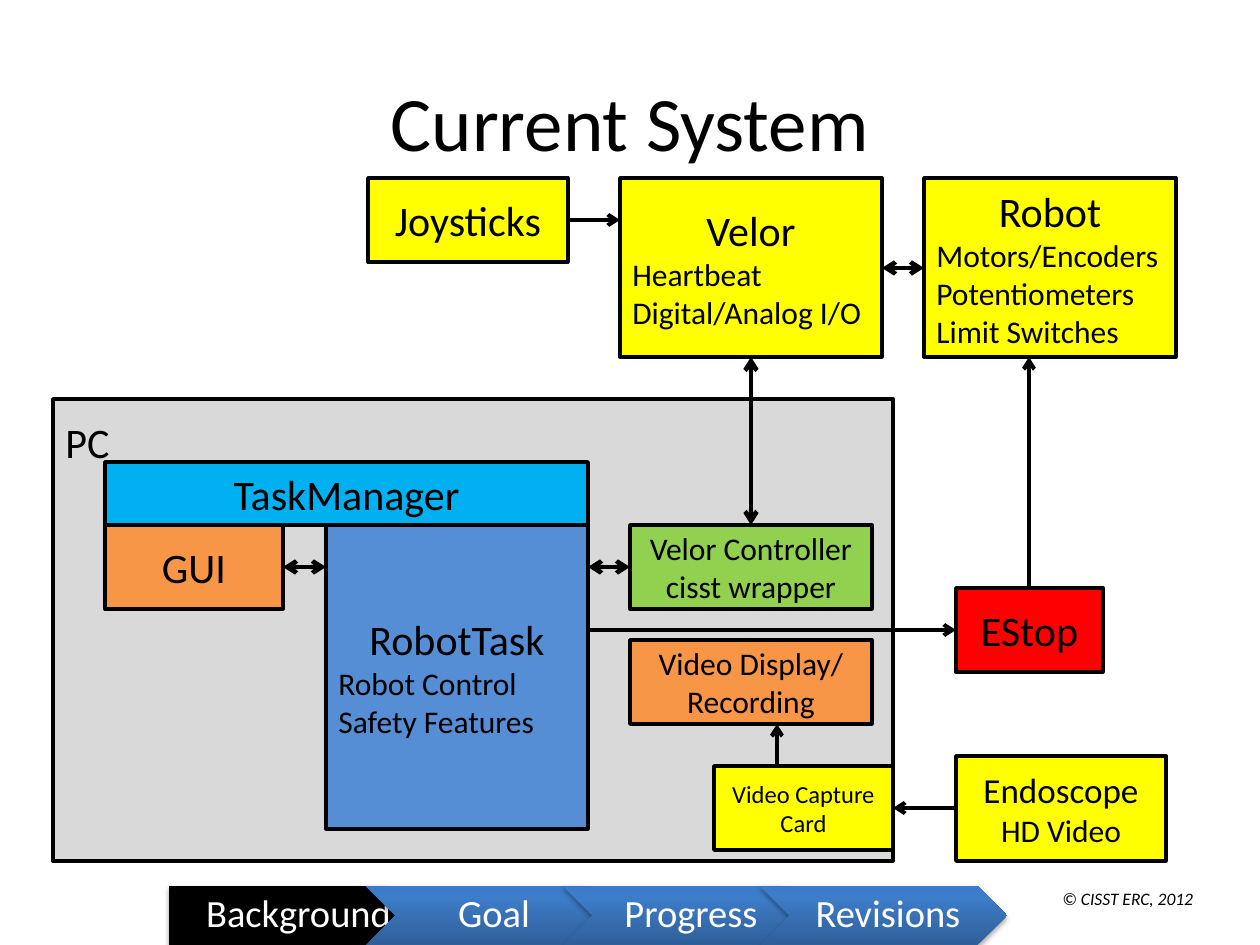
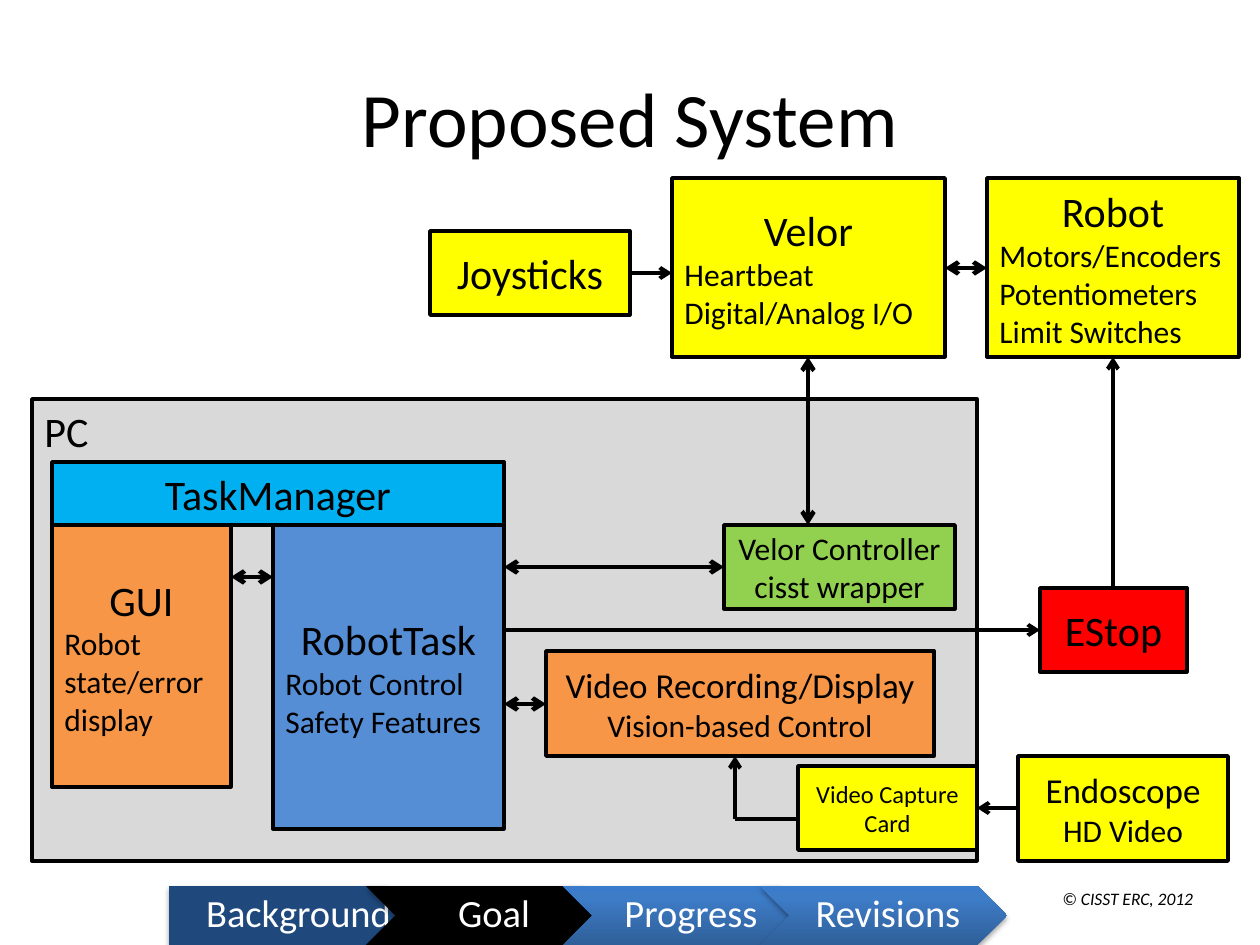
"""Builds two block diagrams: the current and the proposed robot system."""
from copy import deepcopy
from dataclasses import dataclass

from lxml.etree import SubElement
from pptx import Presentation
from pptx.dml.color import RGBColor
from pptx.enum.shapes import MSO_CONNECTOR, MSO_SHAPE
from pptx.enum.text import MSO_ANCHOR, PP_ALIGN
from pptx.oxml.ns import qn
from pptx.util import Pt

PX = 914400 / 126
CENTER, LEFT = PP_ALIGN.CENTER, PP_ALIGN.LEFT


@dataclass(frozen=True)
class Theme:
    font: str = "Calibri"
    ink: str = "000000"
    paper: str = "FFFFFF"
    frame: str = "D9D9D9"
    hardware: str = "FFFF00"
    manager: str = "00B0F0"
    task: str = "558ED5"
    wrapper: str = "92D050"
    app: str = "F79646"
    stop: str = "FF0000"
    step_done: str = "1F497D"
    step_stops: tuple = ((0, "2F5F99"), (0.8, "3D7CC7"), (1, "3A7CCB"))
    title: int = 44
    head: int = 24
    step: int = 22
    subhead: int = 20
    detail: int = 18
    small: int = 14
    credit: int = 10
    outline: float = 2
    one_way: float = 2.25
    two_way: float = 2.5


T = Theme()
STEPS = ["Background", "Goal", "Progress", "Revisions"]
STEP_LEFT, STEP_TOP, STEP_W, STEP_H, STEP_PITCH = 169, 886, 247, 59, 197
CREDIT = "© CISST ERC, 2012"
CREDIT_AREA = (1050, 882, 210, 34)
LABEL_SIZE = (73, 63)

PARTS = {
    "frame": (T.frame, [], LEFT),
    "manager": (T.manager, [("TaskManager", T.head)], CENTER),
    "task": (T.task, [("RobotTask", T.head), ("Robot Control", T.detail),
                      ("Safety Features", T.detail)], LEFT),
    "wrapper": (T.wrapper, [("Velor Controller", T.detail),
                            ("cisst wrapper", T.detail)], CENTER),
    "gui": (T.app, [("GUI", T.head)], CENTER),
    "velor": (T.hardware, [("Velor", T.head), ("Heartbeat", T.detail),
                           ("Digital/Analog I/O", T.detail)], LEFT),
    "robot": (T.hardware, [("Robot", T.head), ("Motors/Encoders", T.detail),
                           ("Potentiometers", T.detail),
                           ("Limit Switches", T.detail)], LEFT),
    "joysticks": (T.hardware, [("Joysticks", T.head)], CENTER),
    "estop": (T.stop, [("EStop", T.head)], CENTER),
    "endoscope": (T.hardware, [("Endoscope", T.subhead), ("HD Video", T.detail)], CENTER),
    "capture": (T.hardware, [("Video Capture Card", T.small)], CENTER),
    "video": (T.app, [("Video Display/ Recording", T.detail)], CENTER),
}

SYSTEMS = [
    {
        "title": "Current System", "title_top": 42, "step": 0, "label": (53, 410),
        "parts": PARTS,
        "areas": {
            "frame": (53, 399, 840, 462), "manager": (105, 462, 483, 63),
            "task": (326, 525, 262, 304), "wrapper": (630, 525, 242, 84),
            "gui": (105, 525, 178, 84), "velor": (620, 178, 262, 179),
            "robot": (924, 178, 252, 179), "joysticks": (368, 178, 200, 84),
            "estop": (956, 588, 147, 84), "endoscope": (956, 756, 210, 105),
            "capture": (714, 766, 179, 84), "video": (630, 640, 242, 84),
        },
        "two_way": [("velor", "wrapper", 751), ("task", "wrapper", 567),
                    ("velor", "robot", 268), ("task", "gui", 567)],
        "one_way": [("joysticks", "velor", 220), ("estop", "robot", 1029),
                    ("task", "estop", 630), ("capture", "video", 777),
                    ("endoscope", "capture", 808)],
        "corners": [],
    },
    {
        "title": "Proposed System", "title_top": 38, "step": 1, "label": (32, 399),
        "parts": PARTS | {
            "gui": (T.app, [("GUI", T.head),
                            ("Robot state/error display", T.detail)], LEFT),
            "video": (T.app, [("Video Recording/Display", T.subhead),
                              ("Vision-based Control", T.detail)], CENTER),
        },
        "areas": {
            "frame": (32, 399, 945, 462), "manager": (52, 462, 452, 63),
            "task": (273, 525, 231, 304), "wrapper": (724, 525, 231, 84),
            "gui": (52, 525, 179, 262), "velor": (672, 178, 273, 179),
            "robot": (987, 178, 252, 179), "joysticks": (430, 231, 200, 84),
            "estop": (1040, 588, 147, 84), "endoscope": (1018, 756, 210, 105),
            "capture": (798, 766, 179, 84), "video": (546, 651, 388, 105),
        },
        "two_way": [("velor", "wrapper", 808), ("task", "wrapper", 567),
                    ("velor", "robot", 268), ("task", "gui", 577),
                    ("video", "task", 704)],
        "one_way": [("joysticks", "velor", 273), ("estop", "robot", 1113),
                    ("task", "estop", 630), ("endoscope", "capture", 808)],
        "corners": [("capture", "video", (735, 819))],
    },
]


def emu(lengths):
    return [round(length * PX) for length in lengths]


def rgb(code):
    return RGBColor.from_string(code)


def write(shape, lines, detail_align=CENTER, color=T.ink, anchor=MSO_ANCHOR.MIDDLE):
    """Fills a shape with (text, size) lines; the first one is centred."""
    frame = shape.text_frame
    frame.word_wrap, frame.vertical_anchor = True, anchor
    for i, (text, size) in enumerate(lines):
        line = frame.add_paragraph() if i else frame.paragraphs[0]
        line.text = text
        line.alignment = detail_align if i else CENTER
        line.font.name, line.font.size = T.font, Pt(size)
        line.font.color.rgb = rgb(color)
    return frame


def add_note(slide, area, text, size):
    """Adds a left-aligned text box."""
    note = slide.shapes.add_textbox(*emu(area))
    line = write(note, [(text, size)], anchor=MSO_ANCHOR.TOP).paragraphs[0]
    line.alignment = LEFT
    return line


def add_part(slide, area, fill, lines, detail_align):
    """Adds one outlined block of the diagram."""
    block = slide.shapes.add_shape(MSO_SHAPE.RECTANGLE, *emu(area))
    block.shadow.inherit = False
    block.fill.solid()
    block.fill.fore_color.rgb = rgb(fill)
    block.line.color.rgb = rgb(T.ink)
    block.line.width = Pt(T.outline)
    write(block, lines, detail_align)


def add_line(slide, start, end, width, ends=()):
    """Draws a straight line with arrowheads at the named ends."""
    link = slide.shapes.add_connector(MSO_CONNECTOR.STRAIGHT, *emu(start + end))
    link.line.color.rgb = rgb(T.ink)
    link.line.width = Pt(width)
    outline = link.line._get_or_add_ln()
    for name in ends:
        SubElement(outline, qn(f"a:{name}"), type="arrow")
    SubElement(link._element.spPr, qn("a:effectLst"))


def facing_edges(a, b):
    """Returns the edges of two spans (start, length) that face each other."""
    if a[0] + a[1] <= b[0]:
        return a[0] + a[1], b[0]
    if b[0] + b[1] <= a[0]:
        return a[0], b[0] + b[1]
    return None


def add_link(slide, a, b, at, width, ends):
    """Joins two areas across the gap between them, at a given x or y."""
    across = facing_edges(a[::2], b[::2])
    if across:
        start, end = ((x, at) for x in across)
    else:
        start, end = ((at, y) for y in facing_edges(a[1::2], b[1::2]))
    add_line(slide, start, end, width, ends)


def paint_step(fill, index, current, properties):
    """Colours a step as current, done or still to come."""
    if index <= current:
        fill.solid()
        fill.fore_color.rgb = rgb(T.ink if index == current else T.step_done)
        return
    fill.gradient()
    fill.gradient_angle = 90
    stops = properties.find(".//" + qn("a:gsLst"))
    stops.append(deepcopy(stops[0]))
    for stop, (position, color) in zip(fill.gradient_stops, T.step_stops):
        stop.position, stop.color.rgb = position, rgb(color)


def add_steps(slide, current):
    """Adds the progress band along the bottom."""
    for i, name in enumerate(STEPS):
        area = emu((STEP_LEFT + i * STEP_PITCH, STEP_TOP, STEP_W, STEP_H))
        step = slide.shapes.add_shape(MSO_SHAPE.CHEVRON if i else MSO_SHAPE.PENTAGON, *area)
        properties = step._element.spPr
        paint_step(step.fill, i, current, properties)
        step.line.fill.background()
        step.shadow.inherit = False
        shadow = SubElement(properties.find(qn("a:effectLst")), qn("a:outerShdw"),
                            blurRad="40000", dist="23000", dir="5400000", rotWithShape="0")
        tint = SubElement(shadow, qn("a:srgbClr"), val=T.ink)
        SubElement(tint, qn("a:alpha"), val="35000")

        caption = write(slide.shapes.add_textbox(*area), [(name, T.step)], color=T.paper)
        caption.margin_left, caption.margin_right, caption.margin_top, caption.margin_bottom = emu(
            (13 if i else 16, 4, 8, 8))
        caption.paragraphs[0].line_spacing = 0.9


def add_system(deck, system):
    """Adds one slide with its title, diagram and footer."""
    slide = deck.slides.add_slide(deck.slide_layouts[5])
    title = slide.shapes.title
    title.left, title.top, title.width, title.height = emu((63, system["title_top"], 1134, 158))
    write(title, [(system["title"], T.title)])
    add_note(slide, CREDIT_AREA, CREDIT, T.credit).font.italic = True

    areas = system["areas"]
    for name, part in system["parts"].items():
        add_part(slide, areas[name], *part)
    add_note(slide, system["label"] + LABEL_SIZE, "PC", T.head)

    for a, b, at in system["two_way"]:
        add_link(slide, areas[a], areas[b], at, T.two_way, ("headEnd", "tailEnd"))
    for a, b, at in system["one_way"]:
        add_link(slide, areas[a], areas[b], at, T.one_way, ("tailEnd",))
    for a, b, corner in system["corners"]:
        add_line(slide, (areas[a][0], corner[1]), corner, T.one_way)
        bottom = areas[b][1] + areas[b][3]
        add_line(slide, corner, (corner[0], bottom), T.one_way, ("tailEnd",))
    add_steps(slide, system["step"])


def main():
    deck = Presentation()
    deck.slide_width, deck.slide_height = emu((1260, 945))
    for system in SYSTEMS:
        add_system(deck, system)
    deck.save("out.pptx")


if __name__ == "__main__":
    main()
